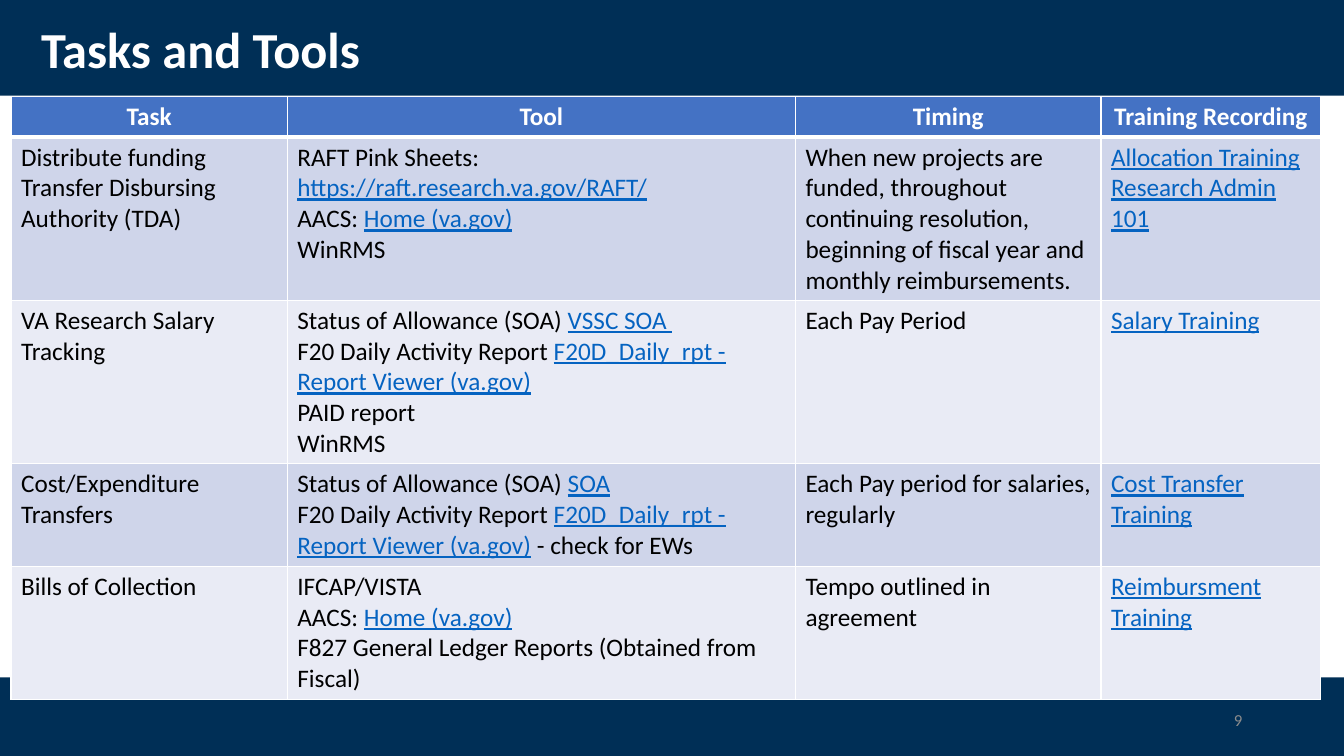
from lxml import etree
from pptx import Presentation
from pptx.dml.color import RGBColor
from pptx.enum import shapes, text
from pptx.oxml import ns
from pptx.util import Inches, Pt

NAVY = RGBColor(0x00, 0x2F, 0x56)
WHITE = RGBColor(0xFF, 0xFF, 0xFF)
BLACK = RGBColor(0x00, 0x00, 0x00)
GRAY = RGBColor(0x8C, 0x8C, 0x8C)
HEADER = RGBColor(0x44, 0x72, 0xC4)
BAND_DARK = RGBColor(0xCF, 0xD5, 0xEA)
BAND_LIGHT = RGBColor(0xE9, 0xEB, 0xF5)
LINK = RGBColor(0x05, 0x63, 0xC1)


def add_run(p, words, size, color, bold=False, underline=False):
    r = p.add_run()
    r.text = words
    r.font.name = "Calibri"
    r.font.size = Pt(size)
    r.font.color.rgb = color
    r.font.bold = bold
    r.font.underline = underline


def set_border(cell, side, width):
    ln = etree.SubElement(cell._tc.get_or_add_tcPr(), ns.qn("a:" + side), w=str(Pt(width)))
    fill = etree.SubElement(ln, ns.qn("a:solidFill"))
    etree.SubElement(fill, ns.qn("a:srgbClr"), val=str(WHITE))


prs = Presentation()
prs.slide_width = Inches(13.33)
prs.slide_height = Inches(7.5)
s = prs.slides.add_slide(prs.slide_layouts[6])

for top, height in [(0, 0.95), (6.72, 0.8)]:
    sp = s.shapes.add_shape(shapes.MSO_SHAPE.RECTANGLE, 0, Inches(top), Inches(13.33), Inches(height))
    sp.shadow.inherit = False
    sp.fill.solid()
    sp.fill.fore_color.rgb = NAVY
    sp.line.fill.background()

labels = [
    ("Tasks and Tools", 0.31, 0.18, 11.5, 0.68, 36, WHITE, True, text.PP_ALIGN.LEFT),
    ("9", 9.42, 6.95, 3, 0.4, 12, GRAY, False, text.PP_ALIGN.RIGHT),
]
for words, left, top, width, height, size, color, bold, align in labels:
    tf = s.shapes.add_textbox(Inches(left), Inches(top), Inches(width), Inches(height)).text_frame
    tf.word_wrap = True
    tf.vertical_anchor = text.MSO_ANCHOR.MIDDLE
    p = tf.paragraphs[0]
    p.alignment = align
    p.line_spacing = 0.9
    add_run(p, words, size, color, bold)

# Text between bars is a link
rows = [
    [["Task"], ["Tool"], ["Timing"], ["Training Recording"]],
    [
        ["Distribute funding Transfer Disbursing Authority (TDA)"],
        ["RAFT Pink Sheets:", "|https://raft.research.va.gov/RAFT/|", "AACS: |Home (va.gov)|", "WinRMS"],
        ["When new projects are funded, throughout continuing resolution, ",
         "beginning of fiscal year and monthly reimbursements."],
        ["|Allocation Training|", "|Research Admin 101|"],
    ],
    [
        ["VA Research Salary Tracking"],
        ["Status of Allowance (SOA) |VSSC SOA |",
         "F20 Daily Activity Report |F20D_Daily_rpt - Report Viewer (va.gov)|",
         "PAID report", "WinRMS"],
        ["Each Pay Period"],
        ["|Salary Training|"],
    ],
    [
        ["Cost/Expenditure Transfers"],
        ["Status of Allowance (SOA) |SOA|",
         "F20 Daily Activity Report |F20D_Daily_rpt - Report Viewer (va.gov)| - check for EWs"],
        ["Each Pay period for salaries, regularly"],
        ["|Cost Transfer Training|"],
    ],
    [
        ["Bills of Collection"],
        ["IFCAP/VISTA", "AACS: |Home (va.gov)|", "F827 General Ledger Reports (Obtained from Fiscal)"],
        ["Tempo outlined in agreement"],
        ["|Reimbursment Training|"],
    ],
]
col_widths = [2.74, 5.04, 3.03, 2.18]
row_heights = [0.4, 1.62, 1.62, 1.02, 1.32]

table = s.shapes.add_table(len(rows), len(col_widths), Inches(0.11), Inches(0.96),
                           Inches(sum(col_widths)), Inches(sum(row_heights))).table
for column, width in zip(table.columns, col_widths):
    column.width = Inches(width)
for row, height in zip(table.rows, row_heights):
    row.height = Inches(height)

for i, row in enumerate(rows):
    for j, lines in enumerate(row):
        cell = table.cell(i, j)
        for side in ("lnL", "lnR", "lnT", "lnB"):
            thick = (i, side) in [(0, "lnB"), (1, "lnT")]
            set_border(cell, side, 3 if thick else 1)
        cell.fill.solid()
        cell.fill.fore_color.rgb = HEADER if i == 0 else BAND_DARK if i % 2 else BAND_LIGHT
        tf = cell.text_frame
        for k, line in enumerate(lines):
            p = tf.paragraphs[0] if k == 0 else tf.add_paragraph()
            p.alignment = text.PP_ALIGN.CENTER if i == 0 else text.PP_ALIGN.LEFT
            for n, words in enumerate(line.split("|")):
                if words:
                    is_link = n % 2 == 1
                    color = WHITE if i == 0 else LINK if is_link else BLACK
                    add_run(p, words, 18, color, i == 0, is_link)

prs.save("out.pptx")
